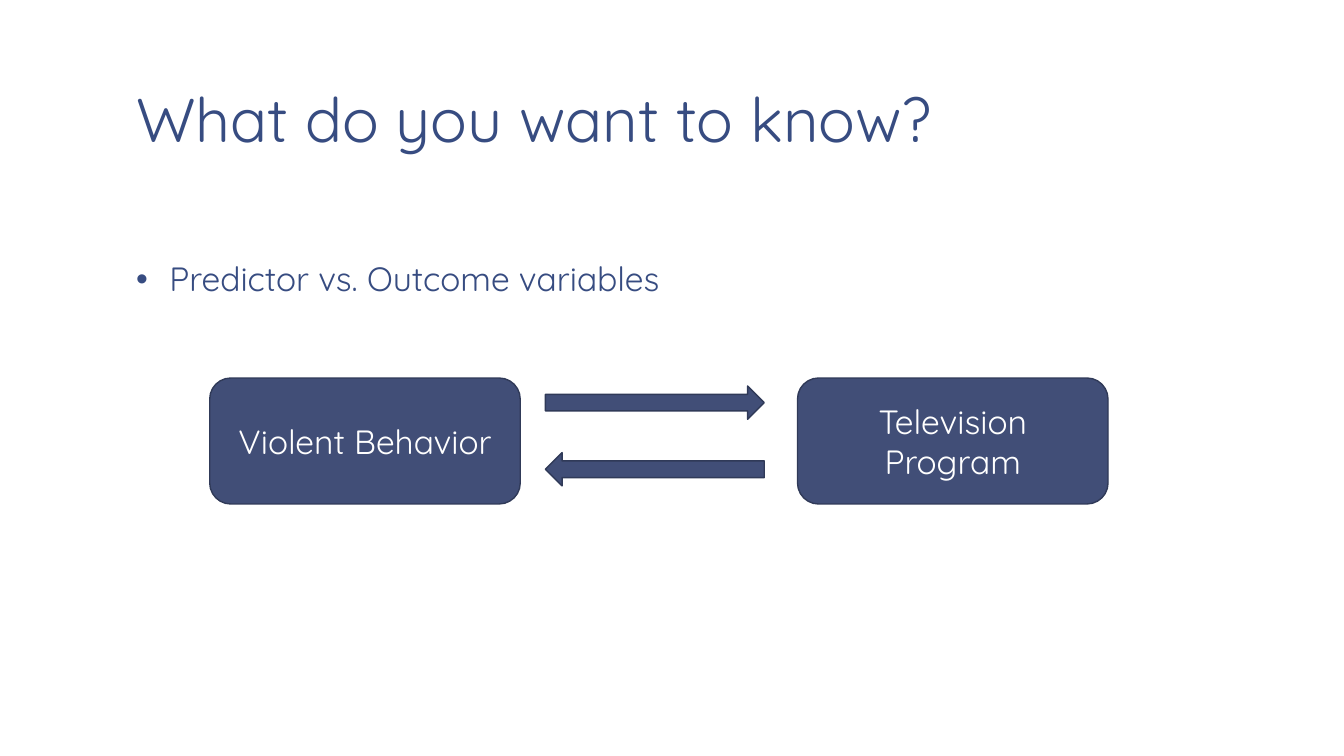
from dataclasses import dataclass

from lxml.etree import SubElement
from pptx import Presentation
from pptx.dml.color import RGBColor
from pptx.enum.shapes import MSO_SHAPE
from pptx.enum.text import MSO_ANCHOR, MSO_AUTO_SIZE, PP_ALIGN
from pptx.oxml.ns import qn
from pptx.util import Inches, Pt


@dataclass(frozen=True)
class Theme:
    """Colours and type sizes of the slide."""

    font: str = "Quicksand"
    background: RGBColor = RGBColor(0xFF, 0xFF, 0xFF)
    text: RGBColor = RGBColor(0x37, 0x4C, 0x81)
    fill: RGBColor = RGBColor(0x41, 0x4E, 0x77)
    outline: RGBColor = RGBColor(0x30, 0x3A, 0x58)
    label: RGBColor = RGBColor(0xFF, 0xFF, 0xFF)
    title_size: Pt = Pt(44)
    body_size: Pt = Pt(24)


THEME = Theme()


def apply(target, values):
    """Set every attribute named in a dict of format values."""
    for name, value in values.items():
        setattr(target, name, value)


def place(shape, box):
    """Move a shape to a box of left, top, width and height in inches."""
    apply(shape, dict(zip(("left", "top", "width", "height"), map(Inches, box))))


def write(paragraph, text, size, color, **values):
    """Fill a paragraph with text in the theme font."""
    paragraph.text = text
    apply(paragraph, {"space_before": Pt(0), **values})
    apply(paragraph.font, {"name": THEME.font, "size": size, "bold": False})
    paragraph.font.color.rgb = color


def set_frame(text_frame, anchor):
    """Give a placeholder frame its margins and anchor."""
    apply(text_frame, {
        "margin_left": Inches(0.13), "margin_right": Inches(0.13),
        "margin_top": Inches(0.07), "margin_bottom": Inches(0.07),
        "word_wrap": True, "auto_size": MSO_AUTO_SIZE.NONE,
        "vertical_anchor": anchor,
    })


def add_title(slide, box, text):
    """Fill the title placeholder."""
    title = slide.shapes.title
    place(title, box)
    set_frame(title.text_frame, MSO_ANCHOR.BOTTOM)
    write(title.text_frame.paragraphs[0], text, THEME.title_size, THEME.text,
          alignment=PP_ALIGN.LEFT, line_spacing=0.85)


def add_bullet(slide, box, text):
    """Fill the body placeholder with one bulleted line."""
    body = slide.placeholders[1]
    place(body, box)
    set_frame(body.text_frame, MSO_ANCHOR.TOP)
    paragraph = body.text_frame.paragraphs[0]
    properties = paragraph._p.get_or_add_pPr()
    properties.set("marL", str(Inches(0.33)))
    properties.set("indent", str(-Inches(0.33)))
    SubElement(properties, qn("a:buFont")).set("typeface", "Arial")
    SubElement(properties, qn("a:buChar")).set("char", "•")
    write(paragraph, text, THEME.body_size, THEME.text,
          alignment=PP_ALIGN.LEFT, line_spacing=0.95)


def add_block(slide, preset, box):
    """Add a filled and outlined preset shape."""
    shape = slide.shapes.add_shape(preset, *map(Inches, box))
    shape.shadow.inherit = False
    shape.fill.solid()
    shape.fill.fore_color.rgb = THEME.fill
    shape.line.color.rgb = THEME.outline
    shape.line.width = Pt(1)
    return shape


def add_variable_diagram(slide, box, labels):
    """Draw two variables at the ends of a box with opposing arrows between."""
    left, top, width, height = box
    card_width = 3.08
    for card_left, label in zip((left, left + width - card_width), labels):
        card = add_block(slide, MSO_SHAPE.ROUNDED_RECTANGLE,
                         (card_left, top, card_width, height))
        apply(card.text_frame, {"word_wrap": True,
                                "vertical_anchor": MSO_ANCHOR.MIDDLE})
        write(card.text_frame.paragraphs[0], label, THEME.body_size, THEME.label,
              alignment=PP_ALIGN.CENTER)
    arrow_left = left + card_width + 0.25
    for row, rotation in enumerate((0, 180)):
        arrow = add_block(slide, MSO_SHAPE.RIGHT_ARROW,
                          (arrow_left, top + 0.08 + row * 0.66, 2.17, 0.33))
        arrow.rotation = rotation


def main():
    """Build and save the presentation."""
    presentation = Presentation()
    apply(presentation, {"slide_width": Inches(13.33), "slide_height": Inches(7.5)})
    slide = presentation.slides.add_slide(presentation.slide_layouts[1])
    slide.background.fill.solid()
    slide.background.fill.fore_color.rgb = THEME.background
    add_title(slide, (1.22, 0.08, 11.11, 1.53), "What do you want to know?")
    add_bullet(slide, (1.22, 2.52, 11.11, 4.23), "Predictor vs. Outcome variables")
    add_variable_diagram(slide, (2.08, 3.75, 8.91, 1.25),
                         ("Violent Behavior", "Television Program"))
    presentation.save("out.pptx")


if __name__ == "__main__":
    main()
